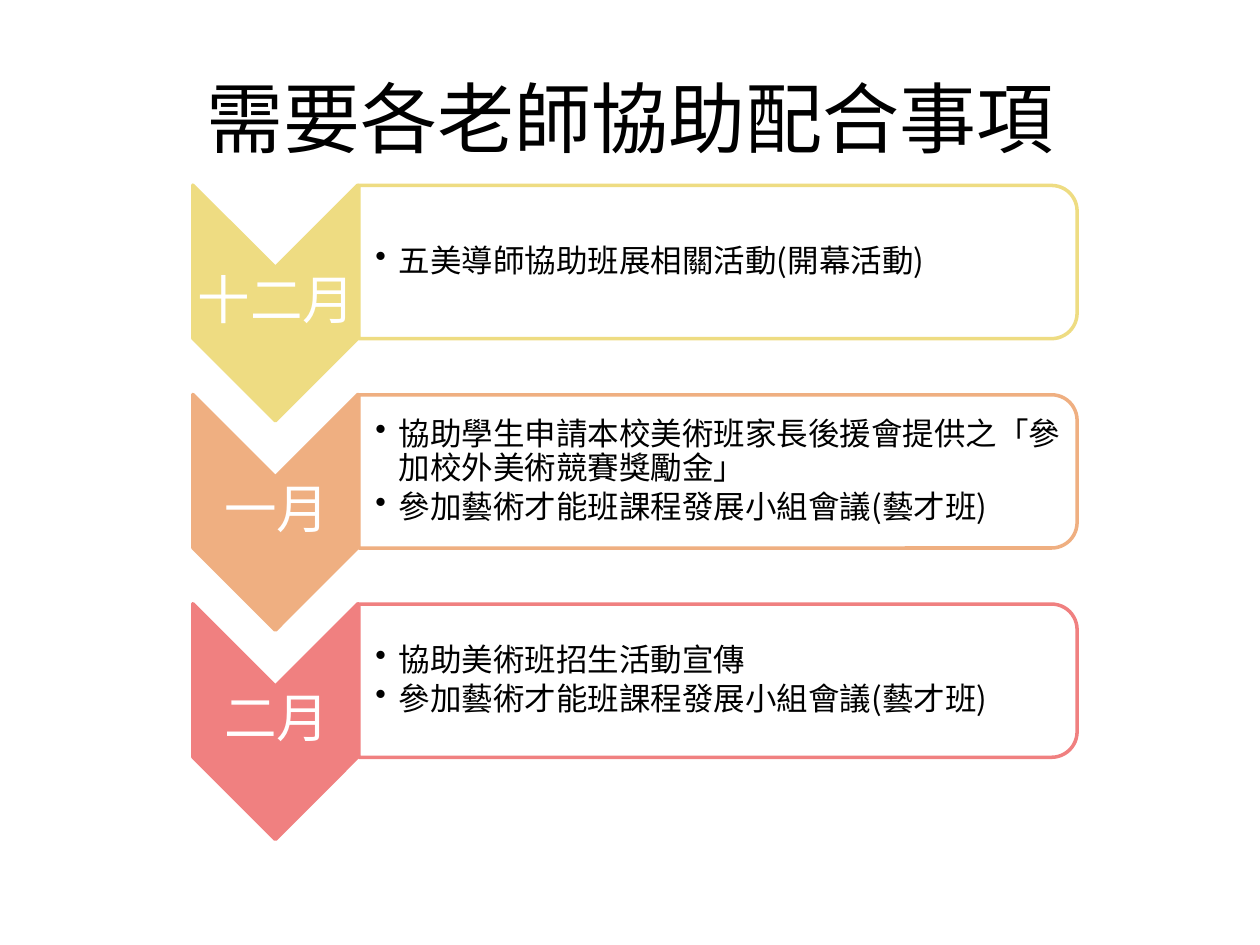
from dataclasses import dataclass

from lxml import etree
from pptx import Presentation
from pptx.dml.color import RGBColor
from pptx.enum import shapes, text
from pptx.oxml import ns
from pptx.util import Pt

COLORS = {
    "black": "000000",
    "white": "FFFFFF",
    "yellow": "EEDC82",
    "orange": "EFAF81",
    "coral": "F08080",
}
CJK_FONT = "Noto Sans CJK SC"
ROW_STEP = 119.6


@dataclass
class Box:
    left: float
    top: float
    width: float
    height: float

    def shifted(self, distance: float) -> "Box":
        return Box(self.left, self.top + distance, self.width, self.height)

    def lengths(self) -> tuple:
        return Pt(self.left), Pt(self.top), Pt(self.width), Pt(self.height)


@dataclass
class Month:
    name: str
    color: str
    tasks: list[str]


# Places in the first row; boxes of rotated shapes are given before rotation
CHEVRON = Box(90, 126, 134.7, 94.3)
LABEL = Box(110.9, 152.6, 94.3, 40.3)
PANEL = Box(366.5, -55.4, 87.6, 410.4)
TASKS = Box(204.5, 110.2, 406, 79.2)

MONTHS = [
    Month("十二月", "yellow", ["五美導師協助班展相關活動(開幕活動)"]),
    Month("一月", "orange", [
        "協助學生申請本校美術班家長後援會提供之「參加校外美術競賽獎勵金」",
        "參加藝術才能班課程發展小組會議(藝才班)",
    ]),
    Month("二月", "coral", [
        "協助美術班招生活動宣傳",
        "參加藝術才能班課程發展小組會議(藝才班)",
    ]),
]


def rgb(name: str) -> RGBColor:
    return RGBColor.from_string(COLORS[name])


def add_bullet(paragraph) -> None:
    paragraph.level = 1
    properties = paragraph._p.get_or_add_pPr()
    properties.set("marL", str(Pt(13.5)))
    properties.set("indent", str(Pt(-13.5)))
    etree.SubElement(properties, ns.qn("a:buChar")).set("char", "•")


def write(paragraph, content: str, *, size: float, color: str = "black",
          font: str = CJK_FONT, align=text.PP_ALIGN.LEFT, bullet: bool = False,
          line_spacing: float = 0.9, space_after: float = 0) -> None:
    if bullet:
        add_bullet(paragraph)
    paragraph.alignment = align
    paragraph.line_spacing = line_spacing
    paragraph.space_after = Pt(space_after)
    run = paragraph.add_run()
    run.text = content
    run.font.size = Pt(size)
    run.font.color.rgb = rgb(color)
    run.font.name = font
    east_asian = etree.SubElement(run._r.get_or_add_rPr(), ns.qn("a:ea"))
    east_asian.set("typeface", CJK_FONT)


def add_rotated_shape(slide, kind, box: Box, fill: str, line: str):
    shape = slide.shapes.add_shape(kind, *box.lengths())
    shape.rotation = 90
    shape.shadow.inherit = False
    shape.fill.solid()
    shape.fill.fore_color.rgb = rgb(fill)
    shape.line.color.rgb = rgb(line)
    shape.line.width = Pt(2)
    return shape


def set_opacity(shape, percent: int) -> None:
    color = shape._element.spPr.find(ns.qn("a:solidFill"))[0]
    etree.SubElement(color, ns.qn("a:alpha")).set("val", str(percent * 1000))


def add_text_frame(slide, box: Box, left_inset: float, inset: float):
    frame = slide.shapes.add_textbox(*box.lengths()).text_frame
    frame.word_wrap = True
    frame.vertical_anchor = text.MSO_ANCHOR.MIDDLE
    frame.margin_left = Pt(left_inset)
    frame.margin_right = frame.margin_top = frame.margin_bottom = Pt(inset)
    return frame


def add_month(slide, month: Month, offset: float) -> None:
    # Chevron with the month name
    add_rotated_shape(slide, shapes.MSO_SHAPE.CHEVRON, CHEVRON.shifted(offset),
                      month.color, month.color)
    label = add_text_frame(slide, LABEL.shifted(offset), 1.5, 1.5)
    write(label.paragraphs[0], month.name, size=30, color="white",
          font="Calibri", align=text.PP_ALIGN.CENTER)

    # Outlined panel with the tasks
    panel = add_rotated_shape(slide, shapes.MSO_SHAPE.ROUND_2_SAME_RECTANGLE,
                              PANEL.shifted(offset), "white", month.color)
    set_opacity(panel, 90)
    frame = add_text_frame(slide, TASKS.shifted(offset), 10, 0.9)
    for index, task in enumerate(month.tasks):
        paragraph = frame.add_paragraph() if index else frame.paragraphs[0]
        write(paragraph, task, size=18, bullet=True, space_after=2.7)


def main() -> None:
    presentation = Presentation()
    presentation.slide_width, presentation.slide_height = Pt(720), Pt(540)
    slide = presentation.slides.add_slide(presentation.slide_layouts[5])

    # Title
    title = slide.shapes.title
    title.left, title.top, title.width, title.height = Box(36, 21.6, 648, 90).lengths()
    title.text_frame.vertical_anchor = text.MSO_ANCHOR.MIDDLE
    write(title.text_frame.paragraphs[0], "需要各老師協助配合事項", size=44,
          align=text.PP_ALIGN.CENTER, line_spacing=1.0)

    # One row per month
    for row, month in enumerate(MONTHS):
        add_month(slide, month, row * ROW_STEP)

    presentation.save("out.pptx")


if __name__ == "__main__":
    main()
